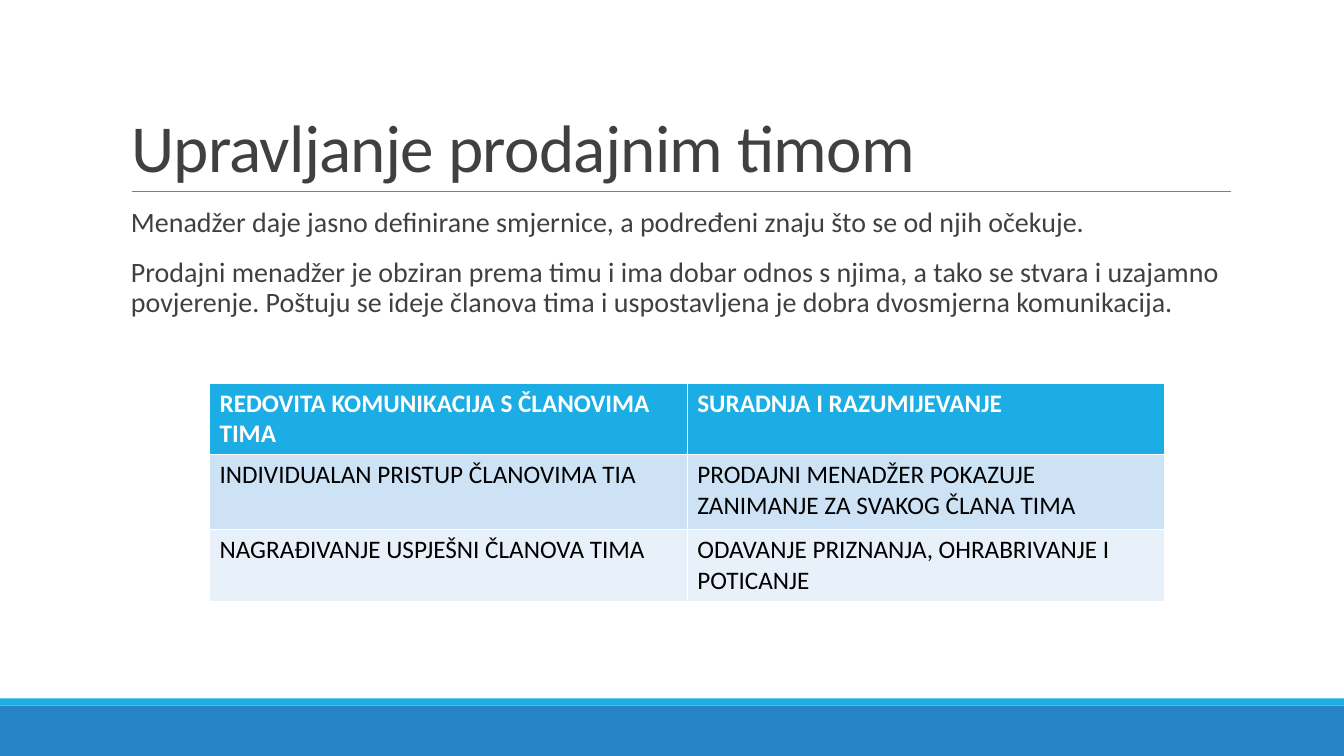
from pptx import Presentation
from pptx.dml.color import RGBColor
from pptx.enum.shapes import MSO_CONNECTOR, MSO_SHAPE
from pptx.enum.text import MSO_ANCHOR, MSO_AUTO_SIZE, PP_ALIGN
from pptx.oxml.ns import qn
from pptx.util import Cm, Pt
from lxml import etree

STRAIGHT, RECTANGLE = MSO_CONNECTOR.STRAIGHT, MSO_SHAPE.RECTANGLE
BOTTOM, LEFT, NO_AUTOFIT = MSO_ANCHOR.BOTTOM, PP_ALIGN.LEFT, MSO_AUTO_SIZE.NONE

TITLE = "Upravljanje prodajnim timom"
STATEMENTS = [
    "Menadžer daje jasno definirane smjernice, a podređeni znaju što se od njih očekuje.",
    "Prodajni menadžer je obziran prema timu i ima dobar odnos s njima, a tako se stvara "
    "i uzajamno povjerenje. Poštuju se ideje članova tima i uspostavljena je dobra "
    "dvosmjerna komunikacija.",
]
PRACTICES = [
    ("REDOVITA KOMUNIKACIJA S ČLANOVIMA TIMA", "SURADNJA I RAZUMIJEVANJE"),
    ("INDIVIDUALAN PRISTUP ČLANOVIMA TIA",
     "PRODAJNI MENADŽER POKAZUJE ZANIMANJE ZA SVAKOG ČLANA TIMA"),
    ("NAGRAĐIVANJE USPJEŠNI ČLANOVA TIMA", "ODAVANJE PRIZNANJA, OHRABRIVANJE I POTICANJE"),
]

FONT = "Calibri"
BLUE = RGBColor(0x26, 0x83, 0xC6)
CYAN = RGBColor(0x1C, 0xAD, 0xE4)
GREY = RGBColor(0x80, 0x80, 0x80)
DARK = RGBColor(0x40, 0x40, 0x40)
WHITE = RGBColor(0xFF, 0xFF, 0xFF)
BLACK = RGBColor(0, 0, 0)
ROW_FILLS = [CYAN, RGBColor(0xCD, 0xE3, 0xF5), RGBColor(0xE8, 0xF1, 0xFA)]

SLIDE_W, SLIDE_H = Cm(33.87), Cm(19.05)
TEXT_LEFT, TEXT_W = Cm(3.05), Cm(27.94)
RULE_LEFT, RULE_RIGHT, RULE_Y = Cm(3.33), Cm(31.01), Cm(4.83)
COLUMN_W = Cm(12.04)
ROW_HEIGHTS = [Cm(1.8), Cm(1.9), Cm(1.8)]


def style(paragraph, size, color, bold=False):
    font = paragraph.runs[0].font
    font.name, font.size, font.bold = FONT, Pt(size), bold
    font.color.rgb = color


def add_band(slide, top, height, color):
    band = slide.shapes.add_shape(RECTANGLE, 0, top, SLIDE_W, height)
    band.shadow.inherit = False
    band.fill.solid()
    band.fill.fore_color.rgb = color
    band.line.fill.background()


def add_rule(slide):
    rule = slide.shapes.add_connector(STRAIGHT, RULE_LEFT, RULE_Y, RULE_RIGHT, RULE_Y)
    rule.line.color.rgb = GREY
    rule.line.width = Pt(0.5)
    etree.SubElement(rule._element.spPr, qn("a:effectLst"))


def fill_title(slide):
    title = slide.shapes.title
    title.left, title.top, title.width, title.height = TEXT_LEFT, Cm(0.79), TEXT_W, Cm(4.04)
    frame = title.text_frame
    frame.text = TITLE
    frame.auto_size = NO_AUTOFIT
    frame.vertical_anchor = BOTTOM
    heading = frame.paragraphs[0]
    heading.alignment = LEFT
    heading.line_spacing = 0.85
    style(heading, 48, DARK)
    heading.runs[0].font._element.set("spc", "-50")


def add_statements(slide):
    frame = slide.shapes.add_textbox(TEXT_LEFT, Cm(5.13), TEXT_W, Cm(11.18)).text_frame
    frame.word_wrap = True
    frame.margin_left = frame.margin_right = 0
    frame.text = "\n".join(STATEMENTS)
    for index, statement in enumerate(frame.paragraphs):
        statement._p.get_or_add_pPr().set("marL", str(Cm(0.25)))
        statement.line_spacing = 0.9
        statement.space_before = Pt(12 if index else 0)
        statement.space_after = Pt(2)
        style(statement, 20, DARK)


def add_practices(slide):
    practices = slide.shapes.add_table(
        len(PRACTICES), 2, Cm(5.28), Cm(9.65), 2 * COLUMN_W, sum(ROW_HEIGHTS)).table
    for column in practices.columns:
        column.width = COLUMN_W
    for index, (row, texts) in enumerate(zip(practices.rows, PRACTICES)):
        row.height = ROW_HEIGHTS[index]
        header = index == 0
        for cell, text in zip(row.cells, texts):
            cell.text = text
            cell.fill.solid()
            cell.fill.fore_color.rgb = ROW_FILLS[index]
            style(cell.text_frame.paragraphs[0], 18, WHITE if header else BLACK, header)


def main():
    deck = Presentation()
    deck.slide_width, deck.slide_height = SLIDE_W, SLIDE_H
    slide = deck.slides.add_slide(deck.slide_layouts.get_by_name("Title Only"))
    add_band(slide, Cm(17.78), Cm(1.27), BLUE)
    add_band(slide, Cm(17.6), Cm(0.18), CYAN)
    add_rule(slide)
    fill_title(slide)
    add_statements(slide)
    add_practices(slide)
    deck.save("out.pptx")


if __name__ == "__main__":
    main()
